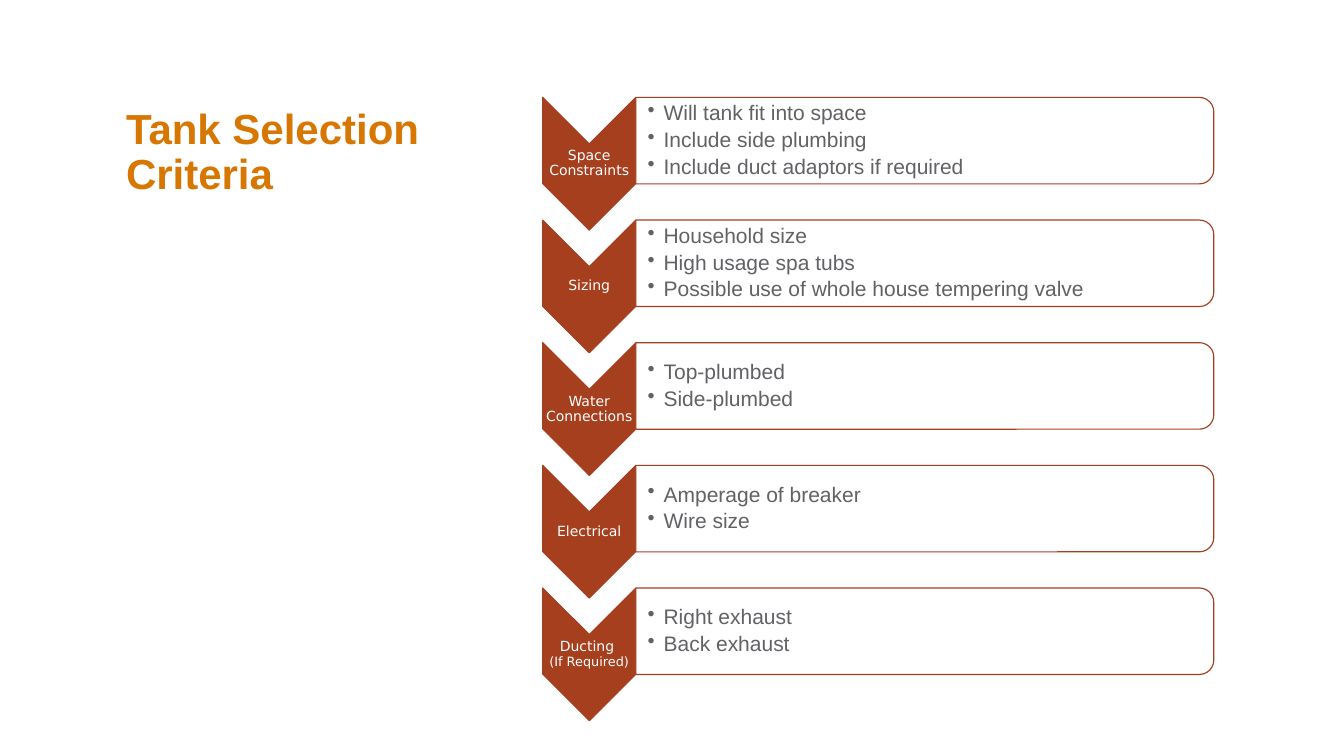
from dataclasses import dataclass

from lxml import etree
from pptx import Presentation
from pptx.dml.color import RGBColor
from pptx.enum.shapes import MSO_SHAPE
from pptx.enum.text import MSO_ANCHOR, MSO_AUTO_SIZE, PP_ALIGN
from pptx.oxml.ns import qn
from pptx.util import Inches, Pt

CHEVRON = MSO_SHAPE.CHEVRON
PANEL = MSO_SHAPE.ROUND_2_SAME_RECTANGLE
LEFT, CENTER = PP_ALIGN.LEFT, PP_ALIGN.CENTER
MIDDLE, BOTTOM = MSO_ANCHOR.MIDDLE, MSO_ANCHOR.BOTTOM
NO_FIT = MSO_AUTO_SIZE.NONE
TITLE_ONLY = 5


@dataclass(frozen=True)
class Theme:
    title_color: str = "D77600"
    accent: str = "A63F1E"
    body_color: str = "616265"
    white: str = "FFFFFF"
    font: str = "Arial"
    label_font: str = "DejaVu Sans"
    title_size: int = 36
    body_size: int = 18
    label_size: int = 12
    note_size: int = 11


THEME = Theme()

# Grid in inches: one row per criterion, a chevron column and a panel column
ROW_TOP, ROW_PITCH = 1.16, 1.46
CHEVRON_LEFT, CHEVRON_WIDTH, CHEVRON_HEIGHT = 6.46, 1.11, 1.58
PANEL_LEFT, PANEL_WIDTH, PANEL_HEIGHT = 7.57, 6.88, 1.03
LABEL_HEIGHT = 0.47
BULLET_INDENT = 0.19

CRITERIA = [
    (["Space Constraints"],
     ["Will tank fit into space", "Include side plumbing",
      "Include duct adaptors if required"]),
    (["Sizing"],
     ["Household size", "High usage spa tubs",
      "Possible use of whole house tempering valve"]),
    (["Water Connections"], ["Top-plumbed", "Side-plumbed"]),
    (["Electrical"], ["Amperage of breaker", "Wire size"]),
    (["Ducting ", "(If Required)"], ["Right exhaust", "Back exhaust"]),
]


def add_bullet(para):
    properties = para._p.get_or_add_pPr()
    properties.set("marL", str(Inches(BULLET_INDENT)))
    properties.set("indent", str(-Inches(BULLET_INDENT)))
    etree.SubElement(properties, qn("a:buChar")).set("char", "•")


def write(frame, paragraphs, *, size, color, font=THEME.font, bold=False,
          align=LEFT, anchor=MIDDLE, margins=(0.01, 0.01, 0.01, 0.01),
          bulleted=False, after=0, note_size=None):
    """Fill a frame; each paragraph is a list of lines, later ones in note_size."""
    frame.word_wrap = True
    frame.auto_size = NO_FIT
    frame.vertical_anchor = anchor
    (frame.margin_left, frame.margin_top,
     frame.margin_right, frame.margin_bottom) = map(Inches, margins)
    for number, lines in enumerate(paragraphs):
        para = frame.add_paragraph() if number else frame.paragraphs[0]
        para.alignment = align
        para.line_spacing = 0.9
        para.space_before = Pt(0)
        para.space_after = Pt(after)
        if bulleted:
            add_bullet(para)
        for index, line in enumerate(lines):
            if index:
                para.add_line_break()
            span = para.add_run()
            span.text = line
            span.font.name = font
            span.font.bold = bold
            span.font.size = Pt(note_size if index and note_size else size)
            span.font.color.rgb = RGBColor.from_string(color)


def add_turned_shape(slide, kind, left, top, width, height, fill):
    """Add a shape turned a quarter clockwise that covers the given area."""
    shift = (width - height) / 2
    shape = slide.shapes.add_shape(kind, Inches(left + shift), Inches(top - shift),
                                   Inches(height), Inches(width))
    shape.rotation = 90
    shape.shadow.inherit = False
    shape.fill.solid()
    shape.fill.fore_color.rgb = RGBColor.from_string(fill)
    shape.line.color.rgb = RGBColor.from_string(THEME.accent)
    shape.line.width = Pt(1)
    return shape


def set_opacity(shape, percent):
    color = shape._element.spPr.find(qn("a:solidFill"))[0]
    etree.SubElement(color, qn("a:alpha")).set("val", str(percent * 1000))


def add_text(slide, left, top, width, height, paragraphs, **text_format):
    box = slide.shapes.add_textbox(*map(Inches, (left, top, width, height)))
    write(box.text_frame, paragraphs, **text_format)


def add_criterion(slide, top, label, points):
    add_turned_shape(slide, CHEVRON, CHEVRON_LEFT, top,
                     CHEVRON_WIDTH, CHEVRON_HEIGHT, THEME.accent)
    label_top = top + (CHEVRON_HEIGHT - LABEL_HEIGHT) / 2
    add_text(slide, CHEVRON_LEFT, label_top, CHEVRON_WIDTH, LABEL_HEIGHT, [label],
             size=THEME.label_size, note_size=THEME.note_size, color=THEME.white,
             font=THEME.label_font, align=CENTER)
    panel = add_turned_shape(slide, PANEL, PANEL_LEFT, top,
                             PANEL_WIDTH, PANEL_HEIGHT, THEME.white)
    set_opacity(panel, 90)
    add_text(slide, PANEL_LEFT, top + 0.05, PANEL_WIDTH - 0.05, PANEL_HEIGHT - 0.1,
             [[point] for point in points], size=THEME.body_size,
             color=THEME.body_color, margins=(0.14, 0.01, 0.01, 0.01),
             bulleted=True, after=3.5)


def add_title(slide, lines):
    title = slide.shapes.title
    title.left, title.top, title.width, title.height = map(
        Inches, (1.5, 1.53, 7.17, 0.89))
    write(title.text_frame, [lines], size=THEME.title_size, color=THEME.title_color,
          bold=True, anchor=BOTTOM, margins=(0, 0.05, 0.1, 0.05))


def main():
    deck = Presentation()
    deck.slide_width, deck.slide_height = Inches(16), Inches(9)
    slide = deck.slides.add_slide(deck.slide_layouts[TITLE_ONLY])
    add_title(slide, ["Tank Selection ", "Criteria"])
    for row, (label, points) in enumerate(CRITERIA):
        add_criterion(slide, ROW_TOP + row * ROW_PITCH, label, points)
    deck.save("out.pptx")


if __name__ == "__main__":
    main()
